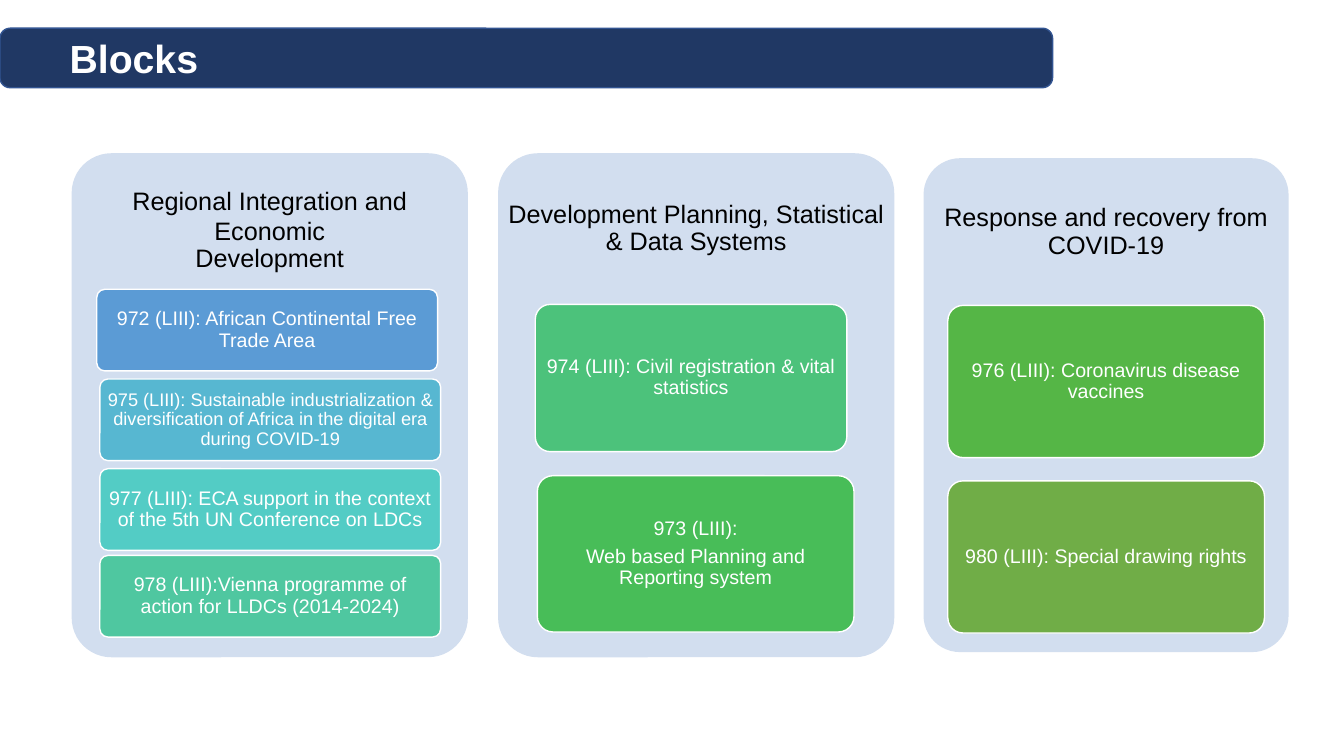
from dataclasses import dataclass

from pptx import Presentation
from pptx.dml.color import RGBColor
from pptx.enum.shapes import MSO_SHAPE
from pptx.enum.text import MSO_ANCHOR, MSO_AUTO_SIZE, PP_ALIGN
from pptx.shapes.autoshape import Shape
from pptx.slide import Slide
from pptx.text.text import TextFrame
from pptx.util import Inches, Pt

SLIDE_WIDTH, SLIDE_HEIGHT = Inches(13.33), Inches(7.5)
FONT = "Arial"
CORNER = 0.1
HEADING_SHARE = 0.3

WHITE = RGBColor(0xFF, 0xFF, 0xFF)
BLACK = RGBColor(0x00, 0x00, 0x00)
NAVY = RGBColor(0x20, 0x38, 0x64)
NAVY_EDGE = RGBColor(0x32, 0x54, 0x91)
PALE_BLUE = RGBColor(0xD2, 0xDE, 0xEF)
BLUE = RGBColor(0x5B, 0x9B, 0xD5)
SKY = RGBColor(0x57, 0xB7, 0xD1)
TURQUOISE = RGBColor(0x53, 0xCC, 0xC5)
MINT = RGBColor(0x4F, 0xC7, 0xA0)
JADE = RGBColor(0x4C, 0xC2, 0x7B)
EMERALD = RGBColor(0x48, 0xBD, 0x58)
GRASS = RGBColor(0x55, 0xB6, 0x46)
OLIVE = RGBColor(0x70, 0xAD, 0x47)


@dataclass(frozen=True)
class Area:
    """A rectangle in percent of the slide's width and height."""
    left: float
    top: float
    width: float
    height: float

    def lengths(self) -> tuple[int, int, int, int]:
        return (int(SLIDE_WIDTH * self.left / 100), int(SLIDE_HEIGHT * self.top / 100),
                int(SLIDE_WIDTH * self.width / 100), int(SLIDE_HEIGHT * self.height / 100))


@dataclass(frozen=True)
class Card:
    area: Area
    color: RGBColor
    lines: tuple[str, ...]
    size: int = 14


@dataclass(frozen=True)
class Block:
    area: Area
    heading: tuple[str, ...]
    cards: tuple[Card, ...]


BAR = Area(0, 3.73, 78.32, 7.87)
TITLE = Area(4.43, 3.87, 68.04, 7.6)

BLOCKS = (
    Block(Area(5.33, 20.27, 29.48, 66.67),
          ("Regional Integration and Economic", "Development"), (
        Card(Area(7.2, 38.27, 25.36, 10.8), BLUE,
             ("972 (LIII): African Continental Free Trade Area",)),
        Card(Area(7.43, 50.13, 25.36, 10.8), SKY,
             ("975 (LIII): Sustainable industrialization & diversification of Africa "
              "in the digital era during COVID-19",), 13),
        Card(Area(7.43, 62, 25.36, 10.8), TURQUOISE,
             ("977 (LIII): ECA support in the context of the 5th UN Conference on LDCs",)),
        Card(Area(7.43, 73.47, 25.36, 10.8), MINT,
             ("978 (LIII):Vienna programme of action for LLDCs (2014-2024)",)),
    )),
    Block(Area(37.06, 20.27, 29.48, 66.67),
          ("Development Planning, Statistical & Data Systems",), (
        Card(Area(39.83, 40.27, 23.18, 19.47), JADE,
             ("974 (LIII): Civil registration & vital statistics",)),
        Card(Area(39.98, 62.93, 23.56, 20.67), EMERALD,
             ("973 (LIII):", "Web based Planning and Reporting system")),
    )),
    Block(Area(68.72, 20.93, 27.16, 65.33),
          ("Response and recovery from COVID-19",), (
        Card(Area(70.52, 40.4, 23.56, 20.13), GRASS,
             ("976 (LIII): Coronavirus disease vaccines",)),
        Card(Area(70.52, 63.6, 23.56, 20.13), OLIVE,
             ("980 (LIII): Special drawing rights",)),
    )),
)


def add_rounded(page: Slide, area: Area, fill: RGBColor,
                edge: RGBColor | None = None, corner: float = CORNER) -> Shape:
    box = page.shapes.add_shape(MSO_SHAPE.ROUNDED_RECTANGLE, *area.lengths())
    box.adjustments[0] = corner
    box.shadow.inherit = False
    box.fill.solid()
    box.fill.fore_color.rgb = fill
    if edge is None:
        box.line.fill.background()
    else:
        box.line.color.rgb = edge
        box.line.width = Pt(1)
    return box


def write_centred(frame: TextFrame, lines: tuple[str, ...], size: int,
                  color: RGBColor, side: float, end: float) -> None:
    """Fill the frame; side and end are its margins in inches."""
    frame.word_wrap = True
    frame.vertical_anchor = MSO_ANCHOR.MIDDLE
    frame.margin_left = frame.margin_right = Inches(side)
    frame.margin_top = frame.margin_bottom = Inches(end)
    frame.text = "\n".join(lines)
    for para in frame.paragraphs:
        para.alignment = PP_ALIGN.CENTER
        para.line_spacing = 0.9
        para.space_after = Pt(size * 0.35)
        para.font.name = FONT
        para.font.size = Pt(size)
        para.font.color.rgb = color


def add_block(page: Slide, block: Block) -> None:
    add_rounded(page, block.area, PALE_BLUE)
    left, top, width, height = block.area.lengths()
    heading = page.shapes.add_textbox(left, top, width, int(height * HEADING_SHARE))
    write_centred(heading.text_frame, block.heading, 18, BLACK, 0.07, 0.07)
    if len(block.heading) > 1:
        opening = heading.text_frame.paragraphs[0]
        opening.line_spacing = 1.0
        opening.space_after = Pt(0)
    for card in block.cards:
        box = add_rounded(page, card.area, card.color, WHITE)
        write_centred(box.text_frame, card.lines, card.size, WHITE, 0.04, 0.03)


def add_title(page: Slide, text: str) -> None:
    title = page.shapes.title
    title.left, title.top, title.width, title.height = TITLE.lengths()
    frame = title.text_frame
    frame.text = text
    frame.auto_size = MSO_AUTO_SIZE.NONE
    frame.vertical_anchor = MSO_ANCHOR.TOP
    para = frame.paragraphs[0]
    para.alignment = PP_ALIGN.LEFT
    para.font.name = FONT
    para.font.size = Pt(28)
    para.font.bold = True
    para.font.color.rgb = WHITE
    bar = add_rounded(page, BAR, NAVY, NAVY_EDGE, 0.17)
    title.element.addprevious(bar.element)  # the bar lies behind the title


def main() -> None:
    deck = Presentation()
    deck.slide_width, deck.slide_height = SLIDE_WIDTH, SLIDE_HEIGHT
    page = deck.slides.add_slide(deck.slide_layouts.get_by_name("Title Only"))
    add_title(page, "Blocks")
    for block in BLOCKS:
        add_block(page, block)
    deck.save("out.pptx")


if __name__ == "__main__":
    main()
